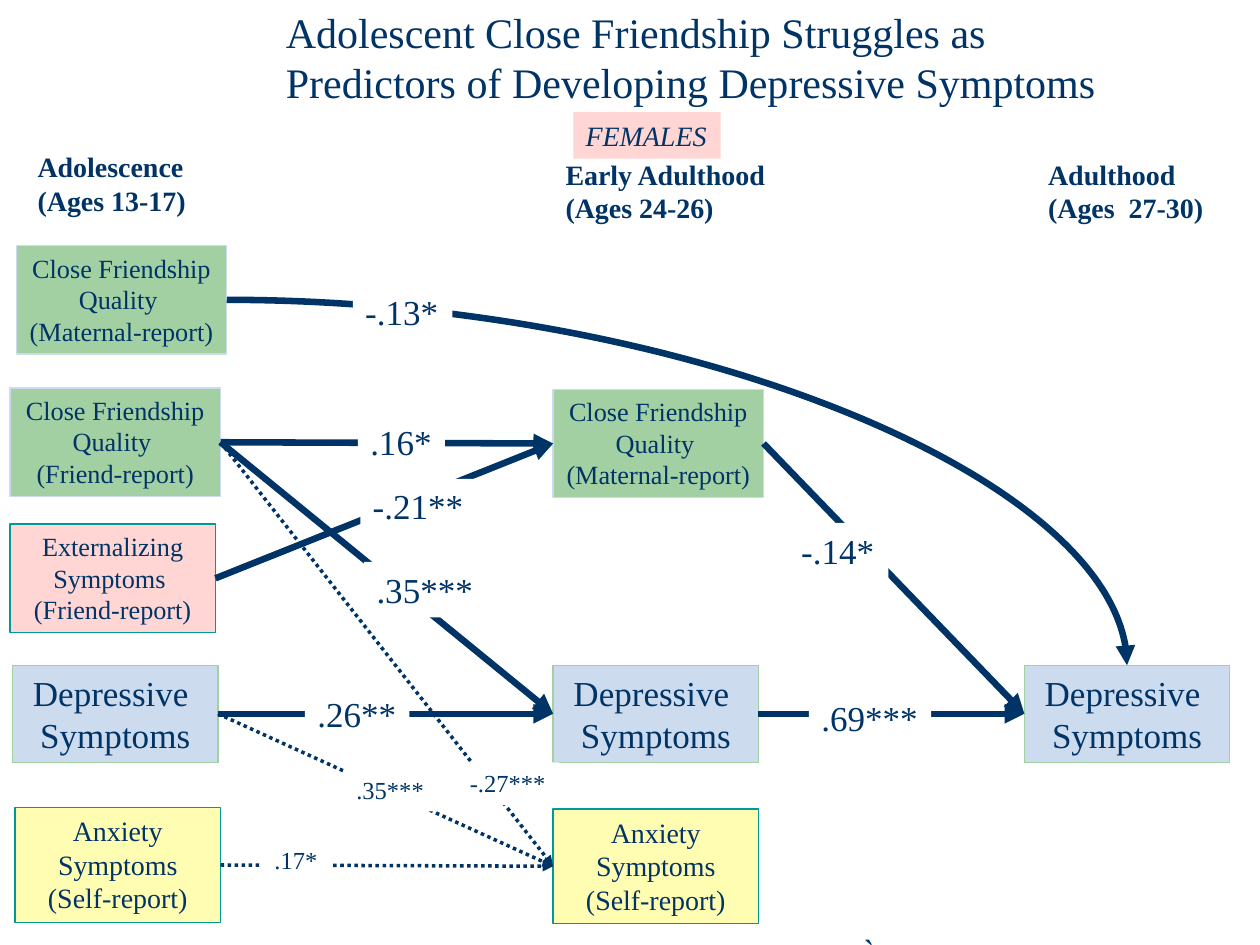
from typing import NamedTuple

import lxml.etree
import pptx
import pptx.dml.color
import pptx.enum.dml
import pptx.enum.shapes
import pptx.enum.text
import pptx.oxml.ns
import pptx.shapes.autoshape
import pptx.shapes.connector
import pptx.slide
import pptx.util

EMU_PER_PX = 9144  # 100 px to the inch
NAVY, WHITE = "003366", "FFFFFF"
GREEN, BLUE, PINK, YELLOW, TEAL = "A2D0A2", "CCDCEE", "FFD6D4", "FFFDB1", "009999"
TOP, LEFT, RIGHT = 0, 1, 3
LABEL_HEIGHTS = {20: 44, 14: 34}


class Style(NamedTuple):
    width: int
    height: int
    fill: str
    border: str
    size: int
    wrap: bool


FRIENDSHIP = Style(167, 86, GREEN, BLUE, 15, False)
EXTERNALIZING = Style(163, 86, PINK, TEAL, 15, True)
DEPRESSIVE = Style(163, 77, BLUE, GREEN, 20, True)
ANXIETY = Style(163, 91, YELLOW, TEAL, 16, True)


class Box(NamedTuple):
    left: int
    top: int
    style: Style
    text: str


class Path(NamedTuple):
    start: str
    end: str
    dotted: bool = False
    curved: bool = False


class Label(NamedTuple):
    left: int
    top: int
    width: int
    text: str
    size: int = 20


class Heading(NamedTuple):
    left: int
    top: int
    width: int
    text: str


QUALITY = "Close Friendship\nQuality \n"
MOOD = "Depressive \nSymptoms"
WORRY = "Anxiety\nSymptoms\n(Self-report)"

BOXES = {
    "maternal teen": Box(13, 195, FRIENDSHIP, QUALITY + "(Maternal-report)"),
    "friend teen": Box(8, 308, FRIENDSHIP, QUALITY + "(Friend-report)"),
    "externalizing": Box(8, 416, EXTERNALIZING, "Externalizing\nSymptoms \n(Friend-report)"),
    "depressive teen": Box(10, 528, DEPRESSIVE, MOOD),
    "anxiety teen": Box(12, 641, ANXIETY, WORRY),
    "maternal early": Box(439, 309, FRIENDSHIP, QUALITY + "(Maternal-report)"),
    "depressive early": Box(439, 528, DEPRESSIVE, MOOD),
    "anxiety early": Box(439, 642, ANXIETY, WORRY),
    "depressive adult": Box(813, 528, DEPRESSIVE, MOOD),
}

PATHS = [
    Path("depressive teen", "depressive early"),
    Path("friend teen", "anxiety early", dotted=True),
    Path("maternal teen", "depressive adult", curved=True),
    Path("depressive teen", "anxiety early", dotted=True),
    Path("friend teen", "maternal early"),
    Path("maternal early", "depressive adult"),
    Path("anxiety teen", "anxiety early", dotted=True),
    Path("externalizing", "maternal early"),
    Path("depressive early", "depressive adult"),
    Path("friend teen", "depressive early"),
]

LABELS = [
    Label(280, 226, 79, "-.13*"),
    Label(284, 329, 69, ".16*"),
    Label(626, 415, 79, "-.14*"),
    Label(242, 545, 83, ".26**"),
    Label(208, 666, 55, ".17*", 14),
    Label(273, 610, 74, ".35***", 14),
    Label(363, 605, 81, "-.27***", 14),
    Label(286, 380, 93, "-.21**"),
    Label(642, 548, 97, ".69***"),
    Label(289, 446, 97, ".35***"),
]

HEADINGS = [
    Heading(20, 114, 139, "Adolescence\n(Ages 13-17)"),
    Heading(439, 120, 180, "Early Adulthood\n(Ages 24-26)"),
    Heading(822, 120, 145, "Adulthood\n(Ages  27-30)"),
]


def px(length: int) -> pptx.util.Emu:
    return pptx.util.Emu(length * EMU_PER_PX)


def color(value: str) -> pptx.dml.color.RGBColor:
    return pptx.dml.color.RGBColor.from_string(value)


def add_text(
    slide: pptx.slide.Slide, left: int, top: int, width: int, height: int, text: str, *,
    size: int, fill: str = "", border: str = "", bold: bool = False, italic: bool = False,
    centered: bool = False, wrap: bool = False,
) -> pptx.shapes.autoshape.Shape:
    """Add a text box, or a rectangle when a fill is given."""
    frame = px(left), px(top), px(width), px(height)
    if fill:
        shape = slide.shapes.add_shape(pptx.enum.shapes.MSO_SHAPE.RECTANGLE, *frame)
        shape.shadow.inherit = False
        shape.fill.solid()
        shape.fill.fore_color.rgb = color(fill)
        if border:
            shape.line.color.rgb = color(border)
            shape.line.width = pptx.util.Pt(0.75)
        else:
            shape.line.fill.background()
    else:
        shape = slide.shapes.add_textbox(*frame)
    text_frame = shape.text_frame
    text_frame.text = text
    text_frame.word_wrap = wrap
    text_frame.auto_size = pptx.enum.text.MSO_AUTO_SIZE.SHAPE_TO_FIT_TEXT
    text_frame.vertical_anchor = pptx.enum.text.MSO_ANCHOR.TOP
    alignment = pptx.enum.text.PP_ALIGN
    for paragraph in text_frame.paragraphs:
        paragraph.alignment = alignment.CENTER if centered else alignment.LEFT
        for run in paragraph.runs:
            run.font.name = "Times New Roman"
            run.font.size = pptx.util.Pt(size)
            run.font.bold = bold
            run.font.italic = italic
            run.font.color.rgb = color(NAVY)
    return shape


def add_box(slide: pptx.slide.Slide, box: Box) -> pptx.shapes.autoshape.Shape:
    style = box.style
    return add_text(slide, box.left, box.top, style.width, style.height, box.text,
                    size=style.size, fill=style.fill, border=style.border,
                    centered=True, wrap=style.wrap)


def add_path(
    slide: pptx.slide.Slide, path: Path, shapes: dict[str, pptx.shapes.autoshape.Shape]
) -> pptx.shapes.connector.Connector:
    """Join two boxes with an arrow from the right side of the first."""
    kinds = pptx.enum.shapes.MSO_CONNECTOR
    kind = kinds.CURVE if path.curved else kinds.STRAIGHT
    connector = slide.shapes.add_connector(kind, 0, 0, 0, 0)
    connector.begin_connect(shapes[path.start], RIGHT)
    connector.end_connect(shapes[path.end], TOP if path.curved else LEFT)
    connector.line.color.rgb = color(NAVY)
    connector.line.width = pptx.util.Pt(2 if path.dotted else 3.75)
    if path.dotted:
        connector.line.dash_style = pptx.enum.dml.MSO_LINE.ROUND_DOT
    qn = pptx.oxml.ns.qn
    properties = connector.element.spPr
    if path.curved:
        properties.find(qn("a:prstGeom")).set("prst", "curvedConnector2")
    lxml.etree.SubElement(properties.find(qn("a:ln")), qn("a:tailEnd"), type="triangle")
    lxml.etree.SubElement(properties, qn("a:effectLst"))
    return connector


def main() -> None:
    presentation = pptx.Presentation()
    presentation.slide_width, presentation.slide_height = px(1000), px(750)
    slide = presentation.slides.add_slide(presentation.slide_layouts[6])

    add_text(slide, 217, 0, 669, 91,
             "Adolescent Close Friendship Struggles as\n"
             "Predictors of Developing Depressive Symptoms", size=24)
    for heading in HEADINGS:
        add_text(slide, heading.left, heading.top, heading.width, 64, heading.text,
                 size=16, bold=True)
    add_text(slide, 673, 733, 29, 44, "`", size=20, italic=True)

    shapes = {name: add_box(slide, box) for name, box in BOXES.items()}
    for path in PATHS:
        add_path(slide, path, shapes)
    for label in LABELS:
        add_text(slide, label.left, label.top, label.width, LABEL_HEIGHTS[label.size],
                 label.text, size=label.size, fill=WHITE)
    add_text(slide, 455, 89, 117, 37, "FEMALES", size=16, fill=PINK, italic=True)

    presentation.save("out.pptx")


if __name__ == "__main__":
    main()
